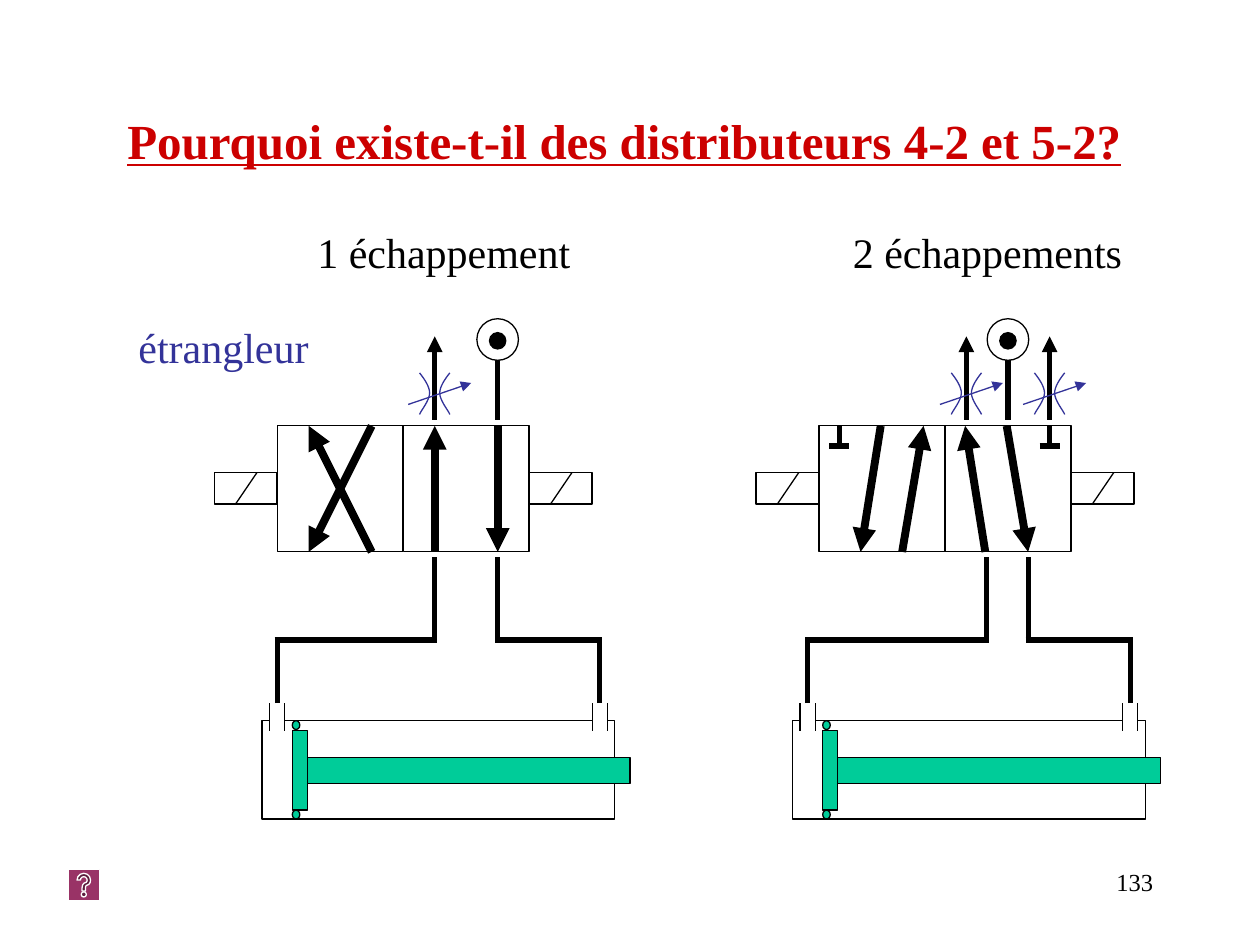
"""Build the slide comparing 4-2 and 5-2 pneumatic valves."""
import dataclasses

import lxml.etree
import pptx
import pptx.dml.color
import pptx.enum.shapes
import pptx.enum.text
import pptx.oxml.ns
import pptx.util

Inches = pptx.util.Inches
Shape = pptx.enum.shapes.MSO_SHAPE
Align = pptx.enum.text.PP_ALIGN


@dataclasses.dataclass(frozen=True)
class Theme:
    """Colours, font, type sizes and line widths."""
    font: str = "Times New Roman"
    ink: str = "000000"
    paper: str = "FFFFFF"
    title: str = "CC0000"
    accent: str = "333399"
    piston: str = "00CC99"
    button: str = "993366"
    title_size: int = 28
    label_size: int = 24
    number_size: int = 14
    thin: float = 0.75
    gap: float = 1
    pipe: float = 3
    flow: float = 4.5


class Diagram:
    """Draw pneumatic symbols on one slide."""

    TOP, BOTTOM = 3.38, 4.38
    BEND = 5.08

    def __init__(self, slide, theme):
        self.slide = slide
        self.theme = theme

    def rgb(self, colour):
        return pptx.dml.color.RGBColor.from_string(colour)

    def text(self, words, left, top, width, height, size, colour,
             align=Align.LEFT, strong=False, before=3):
        box = self.slide.shapes.add_textbox(
            Inches(left), Inches(top), Inches(width), Inches(height))
        box.text_frame.word_wrap = True
        paragraph = box.text_frame.paragraphs[0]
        paragraph.text = words
        paragraph.alignment = align
        paragraph.space_before = pptx.util.Pt(before)
        font = paragraph.font
        font.name, font.size = self.theme.font, pptx.util.Pt(size)
        font.bold = font.underline = strong
        font.color.rgb = self.rgb(colour)

    def shape(self, kind, left, top, width, height, fill=None, outline=None):
        part = self.slide.shapes.add_shape(
            kind, Inches(left), Inches(top), Inches(width), Inches(height))
        part.shadow.inherit = False
        part.fill.solid()
        part.fill.fore_color.rgb = self.rgb(fill or self.theme.paper)
        part.line.color.rgb = self.rgb(outline or self.theme.ink)
        part.line.width = pptx.util.Pt(self.theme.thin)

    def line(self, start, end, width=None, colour=None, arrow=False):
        connector = self.slide.shapes.add_connector(
            pptx.enum.shapes.MSO_CONNECTOR.STRAIGHT,
            *(Inches(value) for value in (*start, *end)))
        connector.line.color.rgb = self.rgb(colour or self.theme.ink)
        connector.line.width = pptx.util.Pt(width or self.theme.thin)
        qn = pptx.oxml.ns.qn
        properties = connector._element.spPr
        if arrow:
            lxml.etree.SubElement(
                properties.find(qn("a:ln")), qn("a:tailEnd"), type="triangle")
        lxml.etree.SubElement(properties, qn("a:effectLst"))

    def arc(self, x, side):
        points = []
        for a, b, c, d in (((0, 0), (0.04, 0.05), (0.08, 0.11), (0.08, 0.16)),
                           ((0.08, 0.16), (0.08, 0.22), (0.01, 0.3), (0, 0.33))):
            for step in range(9):
                t = step / 8
                u = 1 - t
                dx, dy = (u**3 * p + 3 * u * u * t * q + 3 * u * t * t * r + t**3 * s
                          for p, q, r, s in zip(a, b, c, d))
                points.append((Inches(x + side * dx), Inches(2.96 + dy)))
        builder = self.slide.shapes.build_freeform(*points[0])
        builder.add_line_segments(points[1:], close=False)
        curve = builder.convert_to_shape()
        curve.shadow.inherit = False
        curve.fill.background()
        curve.line.color.rgb = self.rgb(self.theme.accent)
        curve.line.width = pptx.util.Pt(self.theme.thin)

    def exhaust(self, x):
        self.line((x, 3.33), (x, 2.67), self.theme.pipe, arrow=True)
        self.arc(x - 0.12, 1)
        self.arc(x + 0.12, -1)
        self.line((x - 0.21, 3.21), (x + 0.29, 3.04),
                  colour=self.theme.accent, arrow=True)

    def supply(self, x):
        self.line((x, 3.33), (x, 2.67), self.theme.pipe)
        self.shape(Shape.OVAL, x - 0.165, 2.53, 0.33, 0.33)
        self.shape(Shape.OVAL, x - 0.065, 2.64, 0.13, 0.13, self.theme.ink)

    def valve(self, left, rising, falling, closed=()):
        for square in (left + 0.5, left + 1.5):
            self.shape(Shape.RECTANGLE, square, self.TOP, 1, 1)
        for solenoid in (left, left + 2.5):
            self.shape(Shape.RECTANGLE, solenoid, 3.75, 0.5, 0.25)
            self.line((solenoid + 0.34, 3.75), (solenoid + 0.17, 4))
        for tail, tip in rising:
            self.line((tail, self.BOTTOM), (tip, self.TOP), self.theme.flow, arrow=True)
        for tail, tip in falling:
            self.line((tail, self.TOP), (tip, self.BOTTOM), self.theme.flow, arrow=True)
        for x in closed:
            self.line((x, self.TOP), (x, 3.54), self.theme.pipe)
            self.line((x - 0.08, 3.54), (x + 0.08, 3.54), self.theme.pipe)

    def cylinder(self, left, outlets):
        paper, piston = self.theme.paper, self.theme.piston
        ports = (left + 0.12, left + 2.68)
        self.shape(Shape.RECTANGLE, left, 5.72, 2.8, 0.78)
        for port in ports:
            self.line((port - 0.06, 5.72), (port + 0.06, 5.72), self.theme.gap, paper)
        self.line((left + 2.74, 6.01), (left + 2.86, 6.01))
        self.line((left + 2.8, 6.01), (left + 2.8, 6.15), colour=paper)
        self.shape(Shape.RECTANGLE, left + 0.24, 5.8, 0.12, 0.63, piston)
        for seal in (5.72, 6.43):
            self.shape(Shape.OVAL, left + 0.24, seal, 0.06, 0.07, piston)
        self.shape(Shape.RECTANGLE, left + 0.36, 6.01, 2.56, 0.21, piston)
        for port, outlet in zip(ports, outlets):
            for wall in (port - 0.06, port + 0.06):
                self.line((wall, 5.58), (wall, 5.8))
            start, end = sorted((port, outlet))
            self.line((outlet, self.BEND), (outlet, 4.42), self.theme.pipe)
            self.line((start - 0.02, self.BEND), (end + 0.02, self.BEND), self.theme.pipe)
            self.line((port, 5.58), (port, 5.06), self.theme.pipe)


def main():
    deck = pptx.Presentation()
    deck.slide_width, deck.slide_height = Inches(10), Inches(7.5)
    theme = Theme()
    diagram = Diagram(deck.slides.add_slide(deck.slide_layouts[6]), theme)

    diagram.text("133", 7.17, 6.83, 2.08, 0.5, theme.number_size, theme.ink,
                 Align.RIGHT, before=0)
    diagram.text("Pourquoi existe-t-il des distributeurs 4-2 et 5-2?",
                 0.83, 0.83, 8.25, 0.57, theme.title_size, theme.title,
                 Align.CENTER, strong=True)
    for words, left, top, width, colour in (
            ("1 échappement", 2.42, 1.75, 2.33, theme.ink),
            ("2 échappements", 6.67, 1.75, 2.67, theme.ink),
            ("étrangleur", 1, 2.5, 1.92, theme.accent)):
        diagram.text(words, left, top, width, 0.5, theme.label_size, colour)

    diagram.valve(1.7, rising=((2.95, 2.45), (3.45, 3.45)),
                  falling=((2.95, 2.45), (3.95, 3.95)))
    diagram.valve(6, rising=((7.16, 7.33), (7.82, 7.66)),
                  falling=((6.99, 6.83), (7.99, 8.16)), closed=(6.66, 8.33))
    for x in (3.45, 7.67, 8.33):
        diagram.exhaust(x)
    for x in (3.95, 8):
        diagram.supply(x)
    diagram.cylinder(2.08, outlets=(3.45, 3.95))
    diagram.cylinder(6.29, outlets=(7.83, 8.16))
    diagram.shape(Shape.ACTION_BUTTON_HELP, 0.54, 6.9, 0.25, 0.25,
                  theme.button, theme.paper)
    deck.save("out.pptx")


if __name__ == "__main__":
    main()
